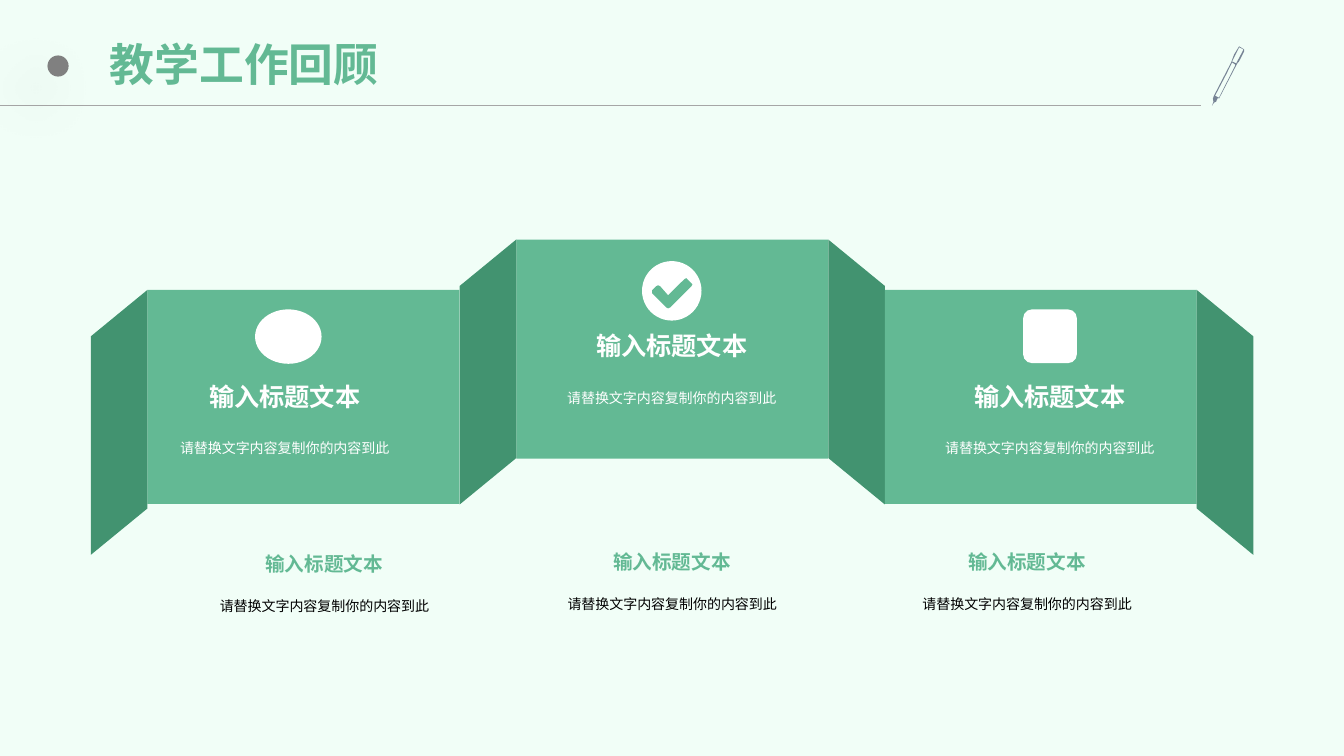
from lxml import etree
from pptx import Presentation
from pptx.dml.color import RGBColor
from pptx.enum.shapes import MSO_CONNECTOR, MSO_SHAPE
from pptx.enum.text import MSO_ANCHOR, MSO_AUTO_SIZE, PP_ALIGN
from pptx.oxml.ns import qn
from pptx.util import Pt

RECT, OVAL = MSO_SHAPE.RECTANGLE, MSO_SHAPE.OVAL
ROUND, FOLD = MSO_SHAPE.ROUNDED_RECTANGLE, MSO_SHAPE.PARALLELOGRAM
LINE = MSO_CONNECTOR.STRAIGHT
MID, FIXED = MSO_ANCHOR.MIDDLE, MSO_AUTO_SIZE.NONE
LEFT, CENTER = PP_ALIGN.LEFT, PP_ALIGN.CENTER

TITLE = "教学工作回顾"
HEAD = "输入标题文本"
BODY = "请替换文字内容复制你的内容到此"
GREEN, DARK, WHITE = "63B994", "429370", "FFFFFF"
PANELS = [
    dict(x=368.8, y=171.1, high=156.5, text=400.3, folds=(1, -1),
         icon=(OVAL, 458.6, 186.5, 42.5, 42.5)),
    dict(x=632, y=207.1, high=152.8, text=670.3, folds=(1,),
         icon=(ROUND, 730.8, 221, 38.4, 38.4)),
    dict(x=105.3, y=207.1, high=152.8, text=123.8, folds=(-1,),
         icon=(OVAL, 182.2, 221, 47.5, 38.9)),
]
NOTES = [(144.7, 391.7), (393.1, 390.2), (646.6, 390.2)]
WIDE, DEEP, TALL = 222.8, 40.4, 189.2
TICK = [[(35.3, 18), (20.2, 33.1), (18.7, 33.8), (17.3, 33.1), (7.2, 23),
         (7.2, 20.9), (10.1, 18), (11.5, 17.3), (13, 18), (18.7, 24.5),
         (30.2, 13), (31.7, 12.2), (32.4, 13), (35.3, 15.8), (36, 16.6)]]
PEN = [
    [(23, 2.2), (19.4, 0), (15.8, 5.8), (13.7, 11.5), (1.4, 35.3),
     (0.7, 37.4), (1.1, 39.6), (0, 42.5), (1.4, 40.3), (2.9, 39.6),
     (4.3, 36.7), (5, 37.4), (17.3, 13.7), (21.6, 5.8), (22.3, 4.3),
     (18.7, 11.2), (19, 11.5), (23, 3.6)],
    [(16.6, 13.7), (5, 36.7), (2.2, 35.3), (10.1, 20.2), (14.4, 11.5),
     (16.6, 13)],
    [(17.3, 12.2), (14.4, 10.8), (19.4, 0.7), (22.6, 2.2)],
]

deck = Presentation()
deck.slide_width, deck.slide_height = Pt(960), Pt(540)
slide = deck.slides.add_slide(deck.slide_layouts[5])
shapes = slide.shapes


def paint(fill, tint):
    fill.solid()
    fill.fore_color.rgb = RGBColor.from_string(tint)


def finish(shape, tint):
    paint(shape.fill, tint)
    shape.line.fill.background()
    shape.shadow.inherit = False
    return shape


def draw(kind, x, y, w, h, tint):
    return finish(shapes.add_shape(kind, Pt(x), Pt(y), Pt(w), Pt(h)), tint)


def trace(loops, x, y, tint):
    pen = None
    for loop in loops:
        spots = [(a * 10, b * 10) for a, b in loop]
        if pen is None:
            pen = shapes.build_freeform(*spots[0], scale=Pt(0.1))
        else:
            pen.move_to(*spots[0])
        pen.add_line_segments(spots[1:], close=True)
    finish(pen.convert_to_shape(Pt(x), Pt(y)), tint)


def write(text, x, y, w, h, size, tint, bold=False, font="Arial",
          align=CENTER, space=1, pad=(0, 0), box=None):
    box = box or shapes.add_textbox(0, 0, 0, 0)
    box.left, box.top, box.width, box.height = Pt(x), Pt(y), Pt(w), Pt(h)
    frame = box.text_frame
    frame.word_wrap, frame.auto_size = True, FIXED
    frame.vertical_anchor = MID
    frame.margin_left = frame.margin_right = Pt(pad[0])
    frame.margin_top = frame.margin_bottom = Pt(pad[1])
    para = frame.paragraphs[0]
    para.alignment, para.line_spacing = align, space
    run = para.add_run()
    run.text = text
    run.font.size, run.font.bold, run.font.name = Pt(size), bold, font
    paint(run.font.fill, tint)
    east = etree.SubElement(run.font._element, qn("a:ea"))
    east.set("typeface", "Noto Sans CJK SC")


def header():
    write(TITLE, 73.4, 13.7, 785.5, 67.7, 32, GREEN, bold=True,
          font="Noto Sans CJK SC", align=LEFT, space=0.9, pad=(5, 3),
          box=shapes.title)
    rule = shapes.add_connector(LINE, 0, Pt(75.4), Pt(858), Pt(75.4))
    paint(rule.line.fill, "A6A6A6")
    rule.line.width = Pt(0.75)
    etree.SubElement(rule._element.spPr, qn("a:effectLst"))
    dot = draw(OVAL, 33.9, 39.6, 15.1, 15.1, "808080")
    glow = etree.SubElement(dot._element.spPr.find(qn("a:effectLst")),
                            qn("a:outerShdw"), blurRad=str(Pt(40)),
                            dist=str(Pt(22)), dir="8100000",
                            algn="ctr", rotWithShape="0")
    shade = etree.SubElement(glow, qn("a:srgbClr"), val="000000")
    etree.SubElement(shade, qn("a:alpha"), val="15000")
    trace(PEN, 865.7, 33.1, "778495")


def panel(x, y, high, text, folds, icon):
    draw(RECT, x, y, WIDE, high, GREEN)
    for side in folds:
        mid = x + (WIDE + DEEP / 2 if side > 0 else -DEEP / 2)
        fold = draw(FOLD, mid - TALL / 2, y + (TALL - DEEP) / 2,
                    TALL, DEEP, DARK)
        fold.adjustments[0] = 0.82
        fold.rotation = 90 if side > 0 else 270
        if side < 0:
            fold._element.spPr.find(qn("a:xfrm")).set("flipV", "1")
    draw(*icon, WHITE)
    write(HEAD, text, y + 62.7, 159, 26, 18, WHITE, bold=True)
    write(BODY, text, y + 86.6, 159, 50, 10, WHITE, space=1.2)


paint(slide.background.fill, "F1FEF7")
header()
for part in PANELS:
    panel(**part)
trace(TICK, *PANELS[0]["icon"][1:3], GREEN)
for x, y in NOTES:
    write(HEAD, x, y, 174, 22.4, 14, GREEN, bold=True)
    write(BODY, x, y + 22.4, 174, 35, 10, "000000", space=1.2)
deck.save("out.pptx")
